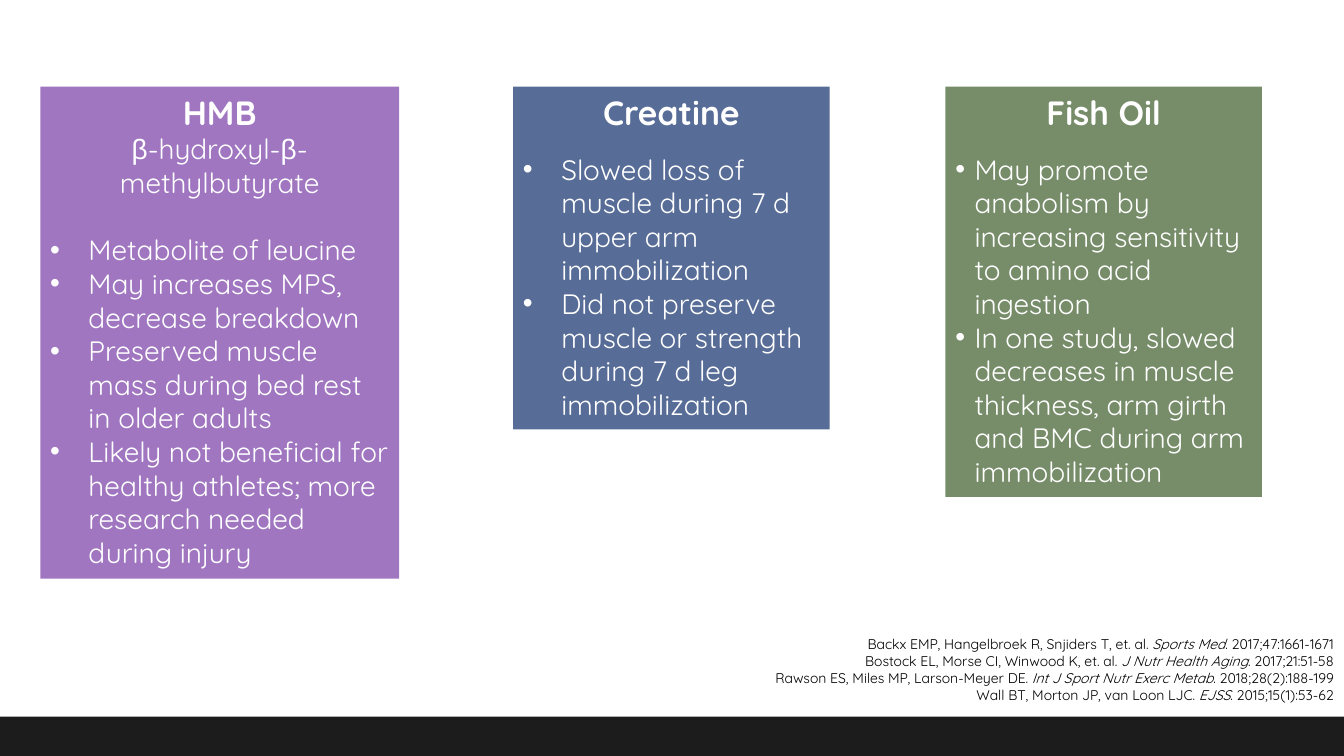
"""Build a slide comparing three supplements for injured athletes."""
from lxml import etree
from pptx import Presentation
from pptx import util as u
from pptx.dml.color import RGBColor
from pptx.enum import shapes, text
from pptx.oxml.ns import qn

COLUMNS, ROWS = 160, 90
CELL = u.Inches(7.5) / ROWS
CARD_TOP = 10.32
FONT = "Quicksand"
WHITE, BLACK, FOOTER = "FFFFFF", "000000", "1C1C1C"

CARDS = [
    dict(
        left=4.8, width=42.72, height=58.56, fill="7030A0", opacity=66,
        title="HMB",
        subtitle=[("β", "Arial"), ("-hydroxyl-", FONT), ("β", "Arial"),
                  ("-methylbutyrate", FONT)],
        gap=24, indent=0.38,
        points=[
            "Metabolite of leucine",
            "May increases MPS, decrease breakdown",
            "Preserved muscle mass during bed rest in older adults",
            "Likely not beneficial for healthy athletes; more research needed during injury",
        ],
    ),
    dict(
        left=61.08, width=37.68, height=40.8, fill="002060", opacity=66,
        title="Creatine", subtitle=[], gap=14.4, indent=0.38,
        points=[
            "Slowed loss of muscle during 7 d upper arm immobilization",
            "Did not preserve muscle or strength during 7 d leg immobilization",
        ],
    ),
    dict(
        left=112.56, width=37.68, height=48.84, fill="385723", opacity=68,
        title="Fish Oil", subtitle=[], gap=14.4, indent=0.19,
        points=[
            "May promote anabolism by increasing sensitivity to amino acid ingestion",
            "In one study, slowed decreases in muscle thickness, arm girth and BMC "
            "during arm immobilization",
        ],
    ),
]

REFERENCES = [
    ("Backx EMP, Hangelbroek R, Snjiders T, et. al. ", "Sports Med", ". 2017;47:1661-1671"),
    ("Bostock EL, Morse CI, Winwood K, et. al. ", "J Nutr Health Aging", ". 2017;21:51-58"),
    ("Rawson ES, Miles MP, Larson-Meyer DE. ", "Int J Sport Nutr Exerc Metab",
     ". 2018;28(2):188-199"),
    ("Wall BT, Morton JP, van Loon LJC. ", "EJSS", ". 2015;15(1):53-62"),
]


def color(hex_value):
    """Turn a hex string into a colour."""
    return RGBColor.from_string(hex_value)


def cells(*counts):
    """Convert grid cells to slide lengths."""
    return [u.Emu(round(count * CELL)) for count in counts]


def add_block(slide, place, fill, opacity=100):
    """Add a borderless rectangle with an opacity in percent."""
    block = slide.shapes.add_shape(shapes.MSO_SHAPE.RECTANGLE, *cells(*place))
    block.shadow.inherit = False
    block.line.fill.background()
    block.fill.solid()
    block.fill.fore_color.rgb = color(fill)
    if opacity < 100:
        tint = block.fill._xPr.find(".//" + qn("a:srgbClr"))
        etree.SubElement(tint, qn("a:alpha"), val=str(opacity * 1000))
    return block


def prepare_frame(frame):
    """Wrap the text from the top and fit the shape to it."""
    frame.word_wrap = True
    frame.vertical_anchor = text.MSO_ANCHOR.TOP
    frame.auto_size = text.MSO_AUTO_SIZE.SHAPE_TO_FIT_TEXT


def style_run(run, size, ink, font=FONT, bold=False, italic=False):
    """Set the look of a run."""
    run.font.size = u.Pt(size)
    run.font.name = font
    run.font.bold = bold
    run.font.italic = italic
    run.font.color.rgb = color(ink)


def add_bullet(paragraph, indent):
    """Give a paragraph a round bullet and a hanging indent in inches."""
    properties = paragraph._p.get_or_add_pPr()
    hang = u.Inches(indent)
    properties.set("marL", str(hang))
    properties.set("indent", str(-hang))
    etree.SubElement(properties, qn("a:buFont"), typeface="Arial")
    etree.SubElement(properties, qn("a:buChar"), char="•")


def add_card(slide, card):
    """Add a supplement card with its title, subtitle and points."""
    place = card["left"], CARD_TOP, card["width"], card["height"]
    frame = add_block(slide, place, card["fill"], card["opacity"]).text_frame
    prepare_frame(frame)
    frame.text = card["title"]
    heading = frame.paragraphs[0]
    heading.alignment = text.PP_ALIGN.CENTER
    style_run(heading.runs[0], 24, WHITE, bold=True)
    if card["subtitle"]:
        subtitle = frame.add_paragraph()
        subtitle.alignment = text.PP_ALIGN.CENTER
        for wording, font in card["subtitle"]:
            run = subtitle.add_run()
            run.text = wording
            style_run(run, 20, WHITE, font)
    for index, wording in enumerate(card["points"]):
        point = frame.add_paragraph()
        point.text = wording
        point.alignment = text.PP_ALIGN.LEFT
        point.space_before = u.Pt(0 if index else card["gap"])
        add_bullet(point, card["indent"])
        style_run(point.runs[0], 20, WHITE)


def add_references(slide, place):
    """Add the right-aligned references with journals in italics."""
    frame = slide.shapes.add_textbox(*cells(*place)).text_frame
    prepare_frame(frame)
    for index, reference in enumerate(REFERENCES):
        line = frame.add_paragraph() if index else frame.paragraphs[0]
        line.alignment = text.PP_ALIGN.RIGHT
        for part, wording in enumerate(reference):
            run = line.add_run()
            run.text = wording
            style_run(run, 10, BLACK, italic=part == 1)


def main():
    """Build and save the slide."""
    deck = Presentation()
    deck.slide_width, deck.slide_height = cells(COLUMNS, ROWS)
    slide = deck.slides.add_slide(deck.slide_layouts[6])
    add_block(slide, (0, 85.32, COLUMNS, 4.68), FOOTER)
    for card in CARDS:
        add_card(slide, card)
    add_references(slide, (79.44, 75.12, 80.52, 9.24))
    deck.save("out.pptx")


if __name__ == "__main__":
    main()
